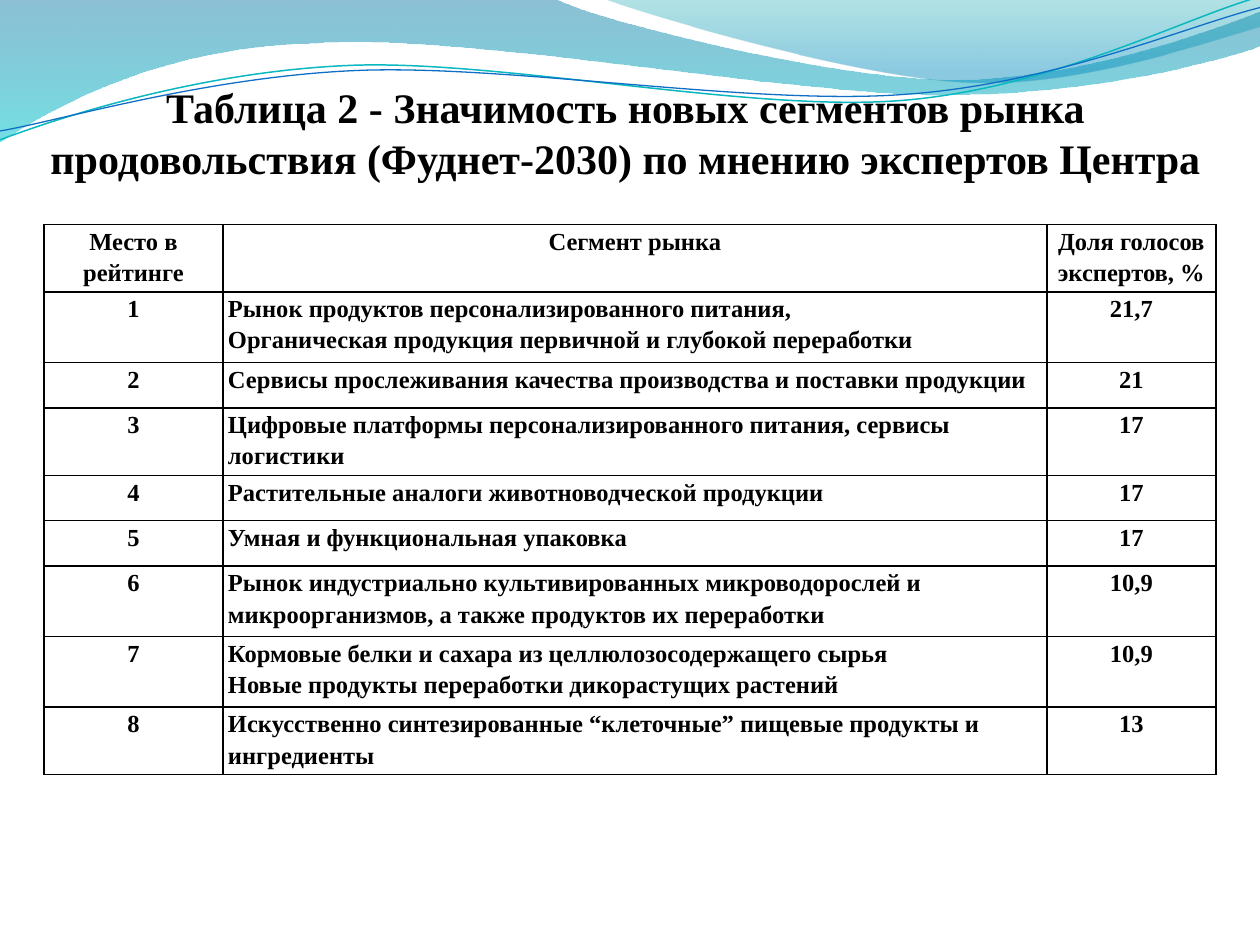
"""Build a slide with a ranking table of food market segments under a wave header."""
from lxml import etree
from pptx import Presentation, util as u
from pptx.dml.color import RGBColor
from pptx.enum import text
from pptx.oxml import ns

FONT = "Times New Roman"
BLACK = "000000"
CENTER, LEFT = text.PP_ALIGN.CENTER, text.PP_ALIGN.LEFT


def rgb(value):
    return RGBColor.from_string(value)


def write(tf, content, size=14, align=CENTER, spacing=None):
    for i, line in enumerate(content.split("\n")):
        p = tf.add_paragraph() if i else tf.paragraphs[0]
        p.alignment, p.line_spacing = align, spacing
        r = p.add_run()
        r.text = line
        r.font.name, r.font.size, r.font.bold = FONT, u.Pt(size), True
        r.font.color.rgb = rgb(BLACK)


prs = Presentation()
prs.slide_width, prs.slide_height = u.Inches(10), u.Inches(7.5)
s = prs.slides.add_slide(prs.slide_layouts[6])

waves = [
    ((0, 0), [(4.4, -0.01), (4.76, 0.17, 6.64, 0.63, 7.58, 0.63),
              (8.53, 0.63, 9.58, 0.26, 10, 0.09), (10.01, 0.36),
              (9.83, 0.44, 8.7, 0.76, 7.46, 0.75),
              (6.22, 0.75, 3.82, 0.28, 2.57, 0.34),
              (1.29, 0.36, 0.46, 0.83, -0.01, 1.13), (0, 0)],
     [(0, "0074A1", 45), (1, "00C6CF", 55)], None),
    ((4.79, -0.01), [(5.09, 0.11, 6.82, 0.62, 7.69, 0.65),
                     (8.56, 0.69, 9.61, 0.32, 10, 0.21), (10, 0), (4.79, -0.01)],
     [(0, "00A1A9", 30), (0.8, "008BBF", 45)], None),
    ((0, 1.11), [(0.48, 0.93, 1.58, 0.57, 2.77, 0.52),
                 (3.95, 0.47, 5.93, 0.89, 7.13, 0.8),
                 (8.33, 0.71, 9.38, 0.15, 9.98, -0.02)],
     None, ("0AB8BF", 0.85)),
    ((0, 1.04), [(0.47, 0.96, 1.64, 0.61, 2.83, 0.56),
                 (4.03, 0.51, 5.97, 0.84, 7.17, 0.75),
                 (8.36, 0.67, 9.41, 0.21, 10, 0.06)],
     None, ("0F6FC6", 0.75)),
]
for start, segments, gradient, line in waves:
    fb = s.shapes.build_freeform(*map(u.Inches, start))
    for seg in segments:
        points = zip(seg[::2], seg[1::2])
        fb.add_line_segments([(u.Inches(x), u.Inches(y)) for x, y in points],
                             close=gradient is not None and seg is segments[-1])
    sp = fb.convert_to_shape()
    sp.shadow.inherit = False
    steps = iter(list(sp._element.spPr.iter(ns.qn("a:lnTo"))))
    for seg in segments:
        step = next(steps)
        if len(seg) == 6:
            step.tag = ns.qn("a:cubicBezTo")
            for other in (next(steps), next(steps)):
                step.append(other[0])
                other.getparent().remove(other)
    if gradient:
        sp.line.fill.background()
        sp.fill.gradient()
        sp.fill.gradient_angle = 270
        for stop, (position, color, opacity) in zip(sp.fill.gradient_stops, gradient):
            stop.position, stop.color.rgb = position, rgb(color)
        for el, (_, _, opacity) in zip(sp._element.spPr.iter(ns.qn("a:srgbClr")), gradient):
            etree.SubElement(el, ns.qn("a:alpha"), val=str(opacity * 1000))
    else:
        sp.fill.background()
        sp.line.color.rgb, sp.line.width = rgb(line[0]), u.Pt(line[1])

sp = s.shapes.add_textbox(*map(u.Inches, (0.28, 0.6, 9.37, 0.91)))
tf = sp.text_frame
tf.word_wrap = True
tf.auto_size = text.MSO_AUTO_SIZE.SHAPE_TO_FIT_TEXT
write(tf, "Таблица 2 - Значимость новых сегментов рынка продовольствия "
      "(Фуднет-2030) по мнению экспертов Центра", size=24)

rows = [
    ("Место в рейтинге", "Сегмент рынка", "Доля голосов экспертов, %"),
    ("1", "Рынок продуктов персонализированного питания,\n"
          "Органическая продукция первичной и глубокой переработки", "21,7"),
    ("2", "Сервисы прослеживания качества производства и поставки продукции", "21"),
    ("3", "Цифровые платформы персонализированного питания, сервисы логистики", "17"),
    ("4", "Растительные аналоги животноводческой продукции", "17"),
    ("5", "Умная и функциональная упаковка", "17"),
    ("6", "Рынок индустриально культивированных микроводорослей и микроорганизмов, "
          "а также продуктов их переработки", "10,9"),
    ("7", "Кормовые белки и сахара из целлюлозосодержащего сырья\n"
          "Новые продукты переработки дикорастущих растений", "10,9"),
    ("8", "Искусственно синтезированные “клеточные” пищевые продукты и ингредиенты", "13"),
]
TALL_ROWS = (1, 6, 7)
gf = s.shapes.add_table(len(rows), 3, *map(u.Inches, (0.35, 1.78, 9.29, 4.37)))
table = gf.table
table.first_row = table.horz_banding = False
for column, width in zip(table.columns, (1.42, 6.54, 1.34)):
    column.width = u.Inches(width)
for i, row in enumerate(rows):
    table.rows[i].height = u.Inches(0.56 if i in TALL_ROWS else 0.36)
    for j, content in enumerate(row):
        cell = table.cell(i, j)
        cell.fill.background()
        cell.margin_left = cell.margin_right = u.Inches(0.04)
        cell.margin_top = cell.margin_bottom = 0
        write(cell.text_frame, content, align=LEFT if i and j == 1 else CENTER, spacing=1.15)
        tc_pr = cell._tc.get_or_add_tcPr()
        for k, side in enumerate(("lnL", "lnR", "lnT", "lnB")):
            ln = etree.Element(ns.qn(f"a:{side}"), w=str(u.Pt(1)))
            fill = etree.SubElement(ln, ns.qn("a:solidFill"))
            etree.SubElement(fill, ns.qn("a:srgbClr"), val=BLACK)
            tc_pr.insert(k, ln)
gf.height = u.Inches(4.37)

prs.save("out.pptx")
